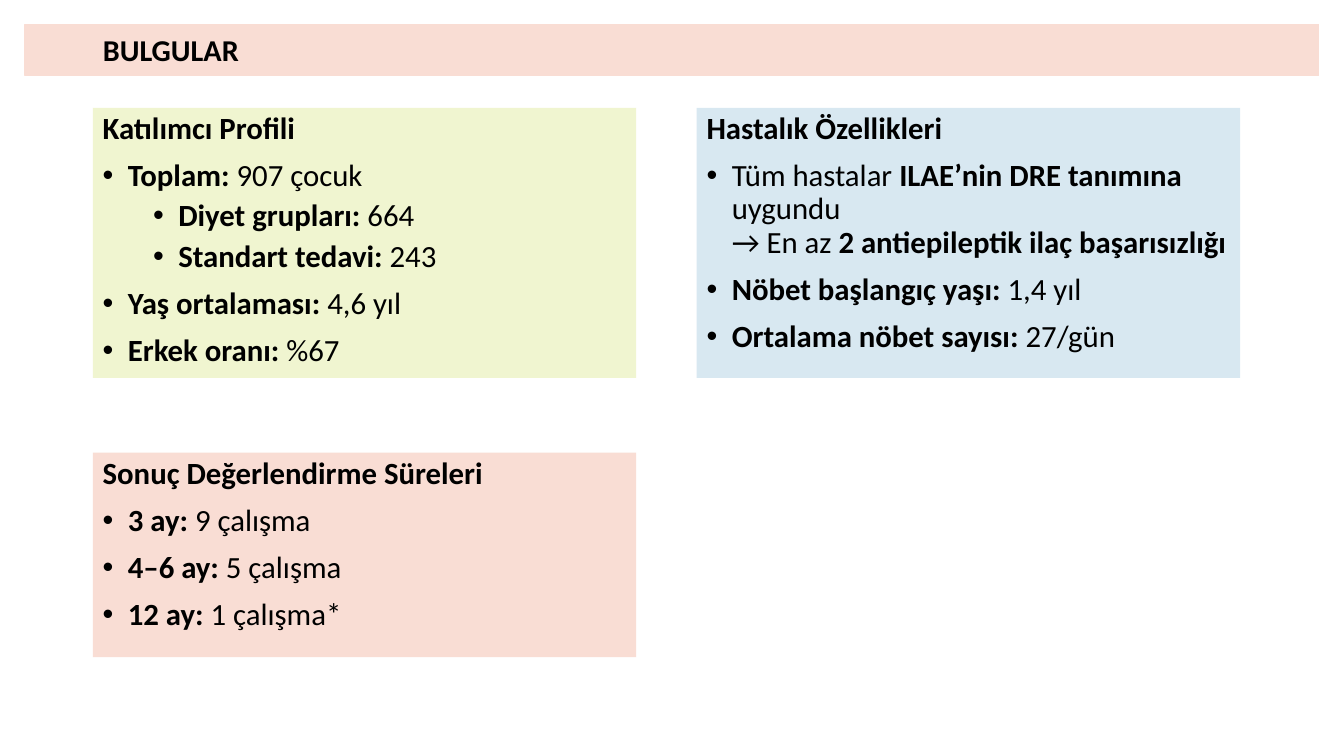
from lxml import etree
from pptx import Presentation
from pptx import util as u
from pptx.dml.color import RGBColor
from pptx.enum import shapes, text
from pptx.oxml.ns import qn

COLORS = {"pink": "F9DDD4", "green": "F0F5D0", "blue": "D8E8F1", "text": "000000"}
FONT = "Calibri"
LEFT, RIGHT, TOP, BOTTOM = 0.92, 6.91, 1.07, 4.49
CARD_WIDTH = 5.39

# Each line is (indent level, text); ** switches bold on and off.
PROFILE = [
    (0, "**Toplam:** 907 çocuk"),
    (1, "**Diyet grupları:** 664"),
    (1, "**Standart tedavi:** 243"),
    (0, "**Yaş ortalaması:** 4,6 yıl"),
    (0, "**Erkek oranı:** %67"),
]
DISEASE = [
    (0, "Tüm hastalar **ILAΕ’nin DRE tanımına** uygundu\n"
        "→ En az **2 antiepileptik ilaç başarısızlığı**"),
    (0, "**Nöbet başlangıç yaşı:** 1,4 yıl"),
    (0, "**Ortalama nöbet sayısı:** 27/gün"),
]
DURATIONS = [
    (0, "**3 ay:** 9 çalışma"),
    (0, "**4–6 ay:** 5 çalışma"),
    (0, "**12 ay:** 1 çalışma*"),
]


def rgb(name):
    return RGBColor.from_string(COLORS[name])


def add_bullet(p, level):
    pPr = p._p.get_or_add_pPr()
    pPr.set("marL", str(u.Inches(0.25 + 0.5 * level)))
    pPr.set("indent", str(u.Inches(-0.25)))
    etree.SubElement(pPr, qn("a:buFont")).set("typeface", "Arial")
    etree.SubElement(pPr, qn("a:buChar")).set("char", "•")
    p.level = level


def write(p, content, size=22, before=0):
    """Fill a paragraph from text with ** bold marks and line breaks."""
    p.alignment = text.PP_ALIGN.LEFT
    p.line_spacing = 0.9
    p.space_before = u.Pt(before)
    for i, part in enumerate(content.split("**")):
        for j, line in enumerate(part.split("\n")):
            if j:
                p.add_line_break()
            if line:
                r = p.add_run()
                r.text = line
                r.font.name = FONT
                r.font.size = u.Pt(size)
                r.font.bold = i % 2 == 1
                r.font.color.rgb = rgb("text")


class Deck:
    def __init__(self):
        self.prs = Presentation()
        self.prs.slide_width = u.Inches(13.33)
        self.prs.slide_height = u.Inches(7.5)
        self.s = self.prs.slides.add_slide(self.prs.slide_layouts[5])

    def rect(self, x, y, w, h, fill, line=None):
        sp = self.s.shapes.add_shape(
            shapes.MSO_SHAPE.RECTANGLE, *map(u.Inches, (x, y, w, h)))
        sp.shadow.inherit = False
        sp.fill.solid()
        sp.fill.fore_color.rgb = rgb(fill)
        if line:
            sp.line.color.rgb = rgb(line)
            sp.line.width = u.Pt(1)
        else:
            sp.line.fill.background()
        return sp

    def title(self, content, x, y, w, h):
        sp = self.s.shapes.title
        sp.left, sp.top, sp.width, sp.height = map(u.Inches, (x, y, w, h))
        tf = sp.text_frame
        tf.auto_size = text.MSO_AUTO_SIZE.NONE
        tf.vertical_anchor = text.MSO_ANCHOR.MIDDLE
        write(tf.paragraphs[0], f"**{content}**", size=21.6)
        self.s.shapes._spTree.append(sp._element)  # in front of the banner

    def card(self, heading, bullets, x, y, h, fill):
        tf = self.rect(x, y, CARD_WIDTH, h, fill).text_frame
        tf.word_wrap = True
        tf.vertical_anchor = text.MSO_ANCHOR.TOP
        write(tf.paragraphs[0], f"**{heading}**")
        for level, content in bullets:
            p = tf.add_paragraph()
            add_bullet(p, level)
            write(p, content, before=5 if level else 10)


def main():
    deck = Deck()
    deck.rect(0.25, 0.24, 12.83, 0.51, "pink", line="pink")
    deck.title("BULGULAR", LEFT, 0.31, 11.5, 0.4)
    deck.card("Katılımcı Profili", PROFILE, LEFT, TOP, 2.68, "green")
    deck.card("Hastalık Özellikleri", DISEASE, RIGHT, TOP, 2.68, "blue")
    deck.card("Sonuç Değerlendirme Süreleri", DURATIONS, LEFT, BOTTOM, 2.03, "pink")
    deck.prs.save("out.pptx")


if __name__ == "__main__":
    main()
